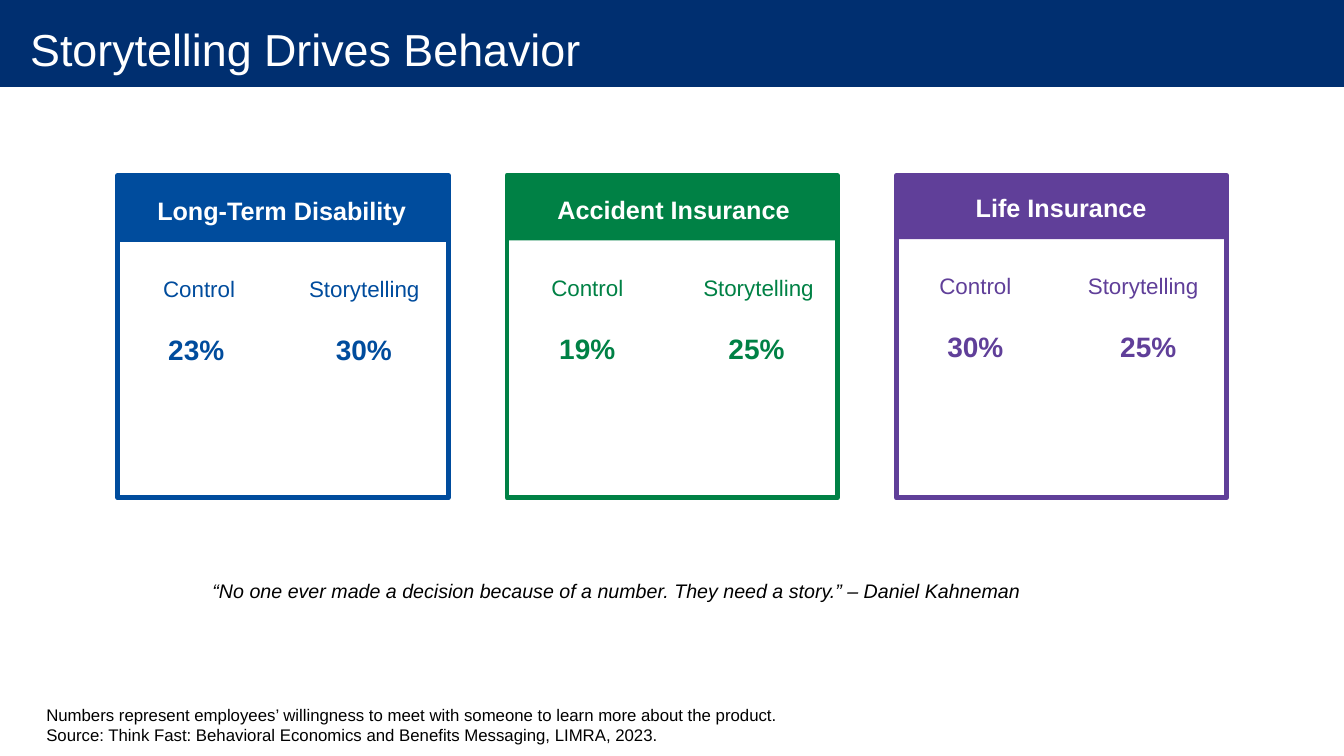
"""Builds the slide comparing control and storytelling response for three products."""
from pptx import Presentation
from pptx import util as u
from pptx.dml import color
from pptx.enum import shapes, text

COLORS = {"navy": "002F70", "blue": "004C9D", "green": "008145",
          "purple": "603F99", "white": "FFFFFF", "black": "000000"}


class Deck:
    def __init__(self, width, height):
        self.prs = Presentation()
        self.prs.slide_width = u.Pt(width)
        self.prs.slide_height = u.Pt(height)
        self.s = self.prs.slides.add_slide(self.prs.slide_layouts[6])
        self.font = "Arial"

    def rgb(self, name):
        return color.RGBColor.from_string(COLORS[name])

    def rect(self, x, y, w, h, fill=None, line=None):
        sp = self.s.shapes.add_shape(shapes.MSO_SHAPE.RECTANGLE,
                                     u.Pt(x), u.Pt(y), u.Pt(w), u.Pt(h))
        sp.shadow.inherit = False
        if fill:
            sp.fill.solid()
            sp.fill.fore_color.rgb = self.rgb(fill)
        else:
            sp.fill.background()
        if line:
            sp.line.color.rgb = self.rgb(line)
            sp.line.width = u.Pt(3.5)
        else:
            sp.line.fill.background()
        return sp

    def text(self, x, y, w, h, lines, size, ink, bold=False, italic=False,
             centered=False):
        sp = self.s.shapes.add_textbox(u.Pt(x), u.Pt(y), u.Pt(w), u.Pt(h))
        tf = sp.text_frame
        tf.word_wrap = True
        for i, line in enumerate(lines):
            p = tf.add_paragraph() if i else tf.paragraphs[0]
            p.alignment = text.PP_ALIGN.CENTER if centered else text.PP_ALIGN.LEFT
            r = p.add_run()
            r.text = line
            r.font.name = self.font
            r.font.size = u.Pt(size)
            r.font.bold = bold
            r.font.italic = italic
            r.font.color.rgb = self.rgb(ink)
        return tf

    def label(self, center, y, w, line, size, ink, bold=False):
        self.text(center - w / 2, y, w, size * 1.6, [line], size, ink, bold,
                  centered=True)

    def title(self, line):
        self.rect(0, 0, 960, 62, fill="navy")
        tf = self.text(0, 0, 960, 70, [line], 32, "white")
        tf.vertical_anchor = text.MSO_ANCHOR.MIDDLE
        tf.margin_left, tf.margin_right = u.Pt(21.6), u.Pt(14.4)
        tf.margin_top = tf.margin_bottom = 0

    def card(self, x, drop, ink, heading, heading_center, columns):
        self.rect(x, 125.3, 236, 45.5 + drop, fill=ink)
        self.rect(x, 125.3, 236, 230.4, line=ink)
        self.label(x + heading_center, 134 + drop, 232, heading, 18, "white", True)
        for name, value, name_center, value_center in columns:
            self.label(x + name_center, 191 + drop, 115, name, 16, ink)
            self.label(x + value_center, 232 + drop, 62, value, 20, ink, True)


def main():
    deck = Deck(960, 540)
    deck.title("Storytelling Drives Behavior")
    cards = [
        ("blue", "Long-Term Disability", 117, ("23%", 58, 56), ("30%", 176, 175.7)),
        ("green", "Accident Insurance", 119, ("19%", 57.3, 57.3), ("25%", 179.6, 178.2)),
        ("purple", "Life Insurance", 117.8, ("30%", 56.5, 56.5), ("25%", 176.4, 180)),
    ]
    for i, (ink, heading, center, control, story) in enumerate(cards):
        deck.card(84.2 + 278 * i, 2 - i, ink, heading, center,
                  [("Control", *control), ("Storytelling", *story)])
    deck.text(144.7, 409.7, 669.6, 24.2,
              ["“No one ever made a decision because of a number. "
               "They need a story.” – Daniel Kahneman"], 14, "black", italic=True)
    deck.text(26, 499.7, 540, 36,
              ["Numbers represent employees’ willingness to meet with someone "
               "to learn more about the product.",
               "Source: Think Fast: Behavioral Economics and Benefits Messaging, "
               "LIMRA, 2023."], 12, "black")
    deck.prs.save("out.pptx")


if __name__ == "__main__":
    main()
